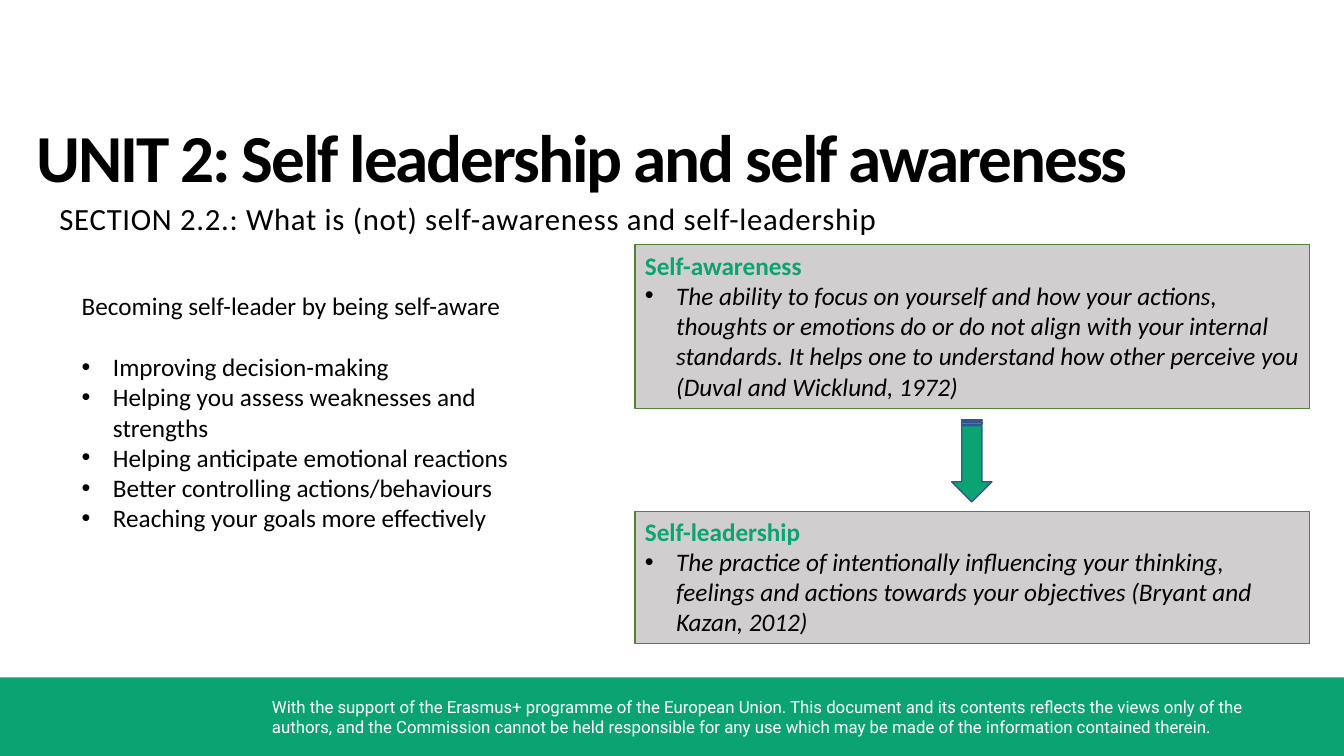
import pptx
import pptx.util
import pptx.dml.color
import pptx.enum.shapes
import pptx.enum.text
import pptx.oxml.ns
import lxml.etree

GREEN = pptx.dml.color.RGBColor(0x0C, 0xA3, 0x73)
GREY = pptx.dml.color.RGBColor(0xD0, 0xCE, 0xCE)
DARK_GREEN = pptx.dml.color.RGBColor(0x54, 0x82, 0x35)
BLUE = pptx.dml.color.RGBColor(0x32, 0x54, 0x91)
BLACK = pptx.dml.color.RGBColor(0x00, 0x00, 0x00)
WHITE = pptx.dml.color.RGBColor(0xFF, 0xFF, 0xFF)

BODY = {"name": "Calibri", "size": pptx.util.Pt(18), "color": BLACK}
HEADING = {**BODY, "color": GREEN, "bold": True}
QUOTE = {**BODY, "italic": True}
TITLE = {**BODY, "size": pptx.util.Pt(48), "bold": True}
SECTION = {**BODY, "size": pptx.util.Pt(22)}
FOOTER = {"name": "Roboto", "size": pptx.util.Pt(12), "color": WHITE}

SHAPES = pptx.enum.shapes.MSO_SHAPE
BENEFITS = [
    "Improving decision-making",
    "Helping you assess weaknesses and strengths",
    "Helping anticipate emotional reactions",
    "Better controlling actions/behaviours",
    "Reaching your goals more effectively",
]
CARDS = [
    (32.4, 21.6, "Self-awareness",
     "The ability to focus on yourself and how your actions, thoughts or emotions do or do not "
     "align with your internal standards. It helps one to understand how other perceive you "
     "(Duval and Wicklund, 1972)"),
    (67.6, 17.47, "Self-leadership",
     "The practice of intentionally influencing your thinking, feelings and actions towards "
     "your objectives (Bryant and Kazan, 2012)"),
]


class SlideBuilder:
    def __init__(self, presentation):
        self.width = presentation.slide_width
        self.height = presentation.slide_height
        self.slide = presentation.slides.add_slide(presentation.slide_layouts[1])
        self.shapes = self.slide.shapes

    def frame(self, left, top, width, height):
        return (int(self.width * left / 100), int(self.height * top / 100),
                int(self.width * width / 100), int(self.height * height / 100))

    def fill_text(self, shape, paragraphs, top_inset=None, spacing=0):
        text_frame = shape.text_frame
        settings = {
            "word_wrap": True,
            "auto_size": pptx.enum.text.MSO_AUTO_SIZE.NONE,
            "vertical_anchor": pptx.enum.text.MSO_ANCHOR.TOP,
        }
        if top_inset is not None:
            settings.update(margin_left=0, margin_right=0, margin_bottom=0,
                            margin_top=pptx.util.Inches(top_inset))
        for name, value in settings.items():
            setattr(text_frame, name, value)
        for index, (text, style, bulleted, space_after) in enumerate(paragraphs):
            paragraph = text_frame.add_paragraph() if index else text_frame.paragraphs[0]
            self.bullet(paragraph, bulleted)
            layout = {
                "alignment": pptx.enum.text.PP_ALIGN.LEFT,
                "space_before": pptx.util.Pt(0),
                "space_after": pptx.util.Pt(space_after),
            }
            for name, value in layout.items():
                setattr(paragraph, name, value)
            run = paragraph.add_run()
            run.text = text
            for name, value in style.items():
                if name == "color":
                    run.font.color.rgb = value
                else:
                    setattr(run.font, name, value)
            if spacing:
                run._r.get_or_add_rPr().set("spc", str(spacing))

    def bullet(self, paragraph, bulleted):
        properties = paragraph._p.get_or_add_pPr()
        indent = pptx.util.Inches(0.31) if bulleted else 0
        properties.set("marL", str(int(indent)))
        properties.set("indent", str(-int(indent)))
        tag = pptx.oxml.ns.qn
        if bulleted:
            lxml.etree.SubElement(properties, tag("a:buFont"), typeface="Arial")
            lxml.etree.SubElement(properties, tag("a:buChar"), char="•")
        else:
            lxml.etree.SubElement(properties, tag("a:buNone"))

    def placeholder(self, index, area, paragraphs, **options):
        shape = self.slide.placeholders[index]
        for name, value in zip(("left", "top", "width", "height"), self.frame(*area)):
            setattr(shape, name, value)
        self.fill_text(shape, paragraphs, **options)

    def text(self, area, paragraphs, **options):
        self.fill_text(self.shapes.add_textbox(*self.frame(*area)), paragraphs, **options)

    def block(self, kind, area, fill, line=None, weight=1.0, rotation=0):
        shape = self.shapes.add_shape(kind, *self.frame(*area))
        shape.shadow.inherit = False
        shape.rotation = rotation
        shape.fill.solid()
        shape.fill.fore_color.rgb = fill
        if line is None:
            shape.line.fill.background()
        else:
            shape.line.color.rgb = line
            shape.line.width = pptx.util.Pt(weight)
        return shape

    def card(self, top, height, heading, definition):
        shape = self.block(SHAPES.RECTANGLE, (47.25, top, 50.18, height), GREY, DARK_GREEN, 0.75)
        self.fill_text(shape, [(heading, HEADING, False, 0), (definition, QUOTE, True, 0)])


def main():
    presentation = pptx.Presentation()
    presentation.slide_width = pptx.util.Inches(13.33)
    presentation.slide_height = pptx.util.Inches(7.5)
    builder = SlideBuilder(presentation)

    builder.block(SHAPES.RECTANGLE, (0, 89.6, 100, 10.4), GREEN)
    builder.text((19.5, 91.47, 78.15, 6.67), [(
        "With the support of the Erasmus+ programme of the European Union. This document and its "
        "contents reflects the views only of the authors, and the Commission cannot be held "
        "responsible for any use which may be made of the information contained therein.",
        FOOTER, False, 0)])
    builder.placeholder(0, (2.7, 14.93, 85.35, 10.93), [
        ("UNIT 2: Self leadership and self awareness", TITLE, False, 0)],
        top_inset=0.02, spacing=-150)
    builder.text((4.42, 25.87, 63.15, 5.2), [
        ("SECTION 2.2.: What is (not) self-awareness and self-leadership", SECTION, False, 0)],
        top_inset=0.04, spacing=50)
    for card in CARDS:
        builder.card(*card)
    builder.block(SHAPES.STRIPED_RIGHT_ARROW, (69.23, 58.27, 6.15, 5.33), GREEN, BLUE, rotation=90)
    builder.placeholder(1, (5.33, 37.73, 36.9, 33.6), [
        ("Becoming self-leader by being self-aware", BODY, False, 22),
        *((benefit, BODY, True, 0) for benefit in BENEFITS)])

    presentation.save("out.pptx")


if __name__ == "__main__":
    main()
